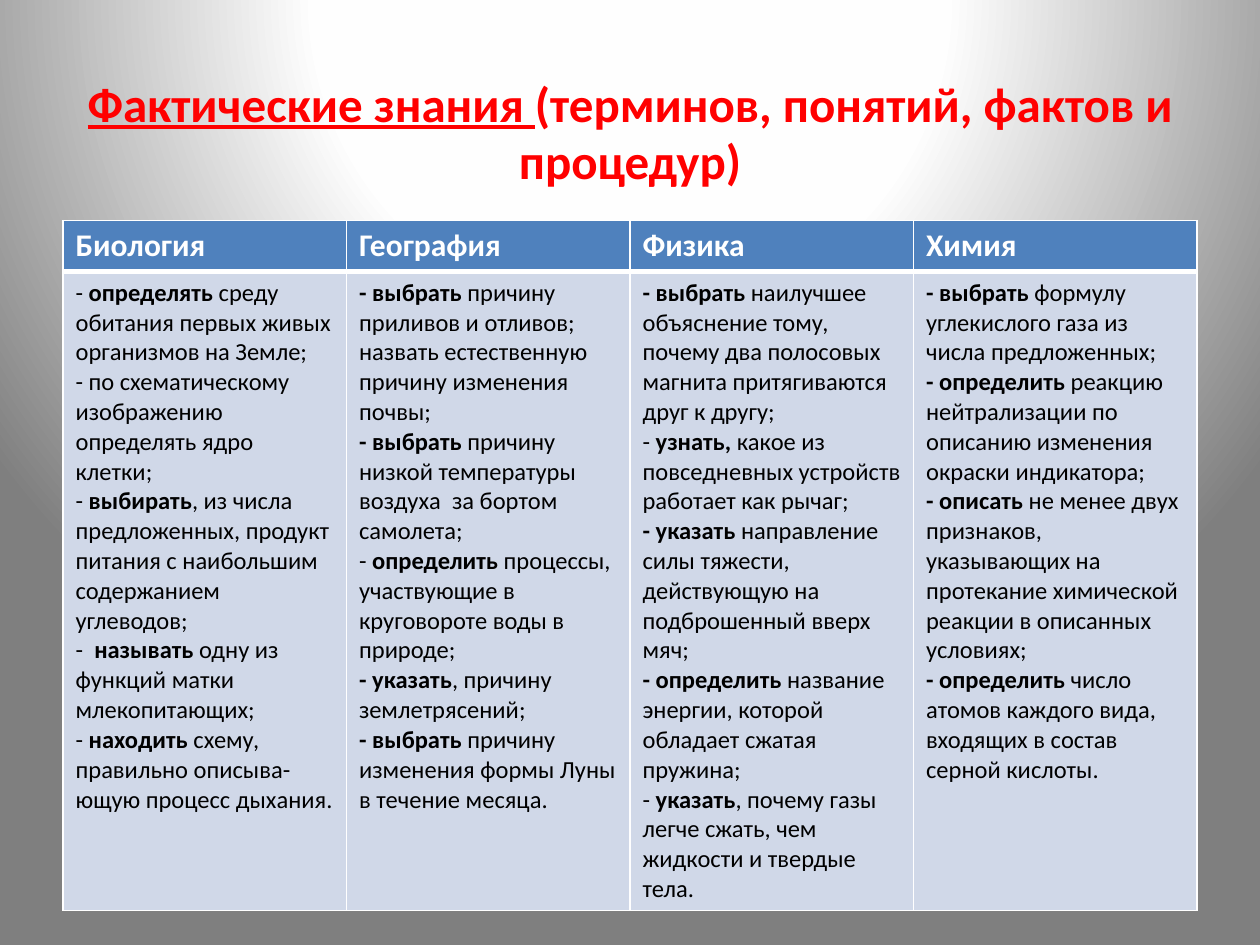
"""Build a slide with a table of factual knowledge in four school subjects."""
from lxml import etree
from pptx import Presentation
from pptx.dml.color import RGBColor
from pptx.enum.text import MSO_ANCHOR, PP_ALIGN
from pptx.oxml import parse_xml
from pptx.oxml.ns import nsdecls, qn
from pptx.util import Inches, Pt

RED = RGBColor(0xFF, 0x00, 0x00)
WHITE = RGBColor(0xFF, 0xFF, 0xFF)
BLACK = RGBColor(0x00, 0x00, 0x00)
HEADER_BLUE = RGBColor(0x4F, 0x81, 0xBD)
BODY_BLUE = RGBColor(0xD0, 0xD8, 0xE8)
GRADIENT = [(0, WHITE), (40, RGBColor(0xFE, 0xFE, 0xFE)), (100, RGBColor(0x7F, 0x7F, 0x7F))]
FONT = "Calibri"

SUBJECTS = {
    "Биология": [
        "- *определять* среду обитания первых живых организмов на Земле;",
        "- по схематическому изображению определять ядро клетки;",
        "- *выбирать*, из числа предложенных, продукт питания с наибольшим содержанием углеводов;",
        "-  *называть* одну из функций матки млекопитающих;",
        "- *находить* схему, правильно описыва-ющую процесс дыхания.",
    ],
    "География": [
        "*- выбрать* причину приливов и отливов;",
        "назвать естественную причину изменения почвы;",
        "*- выбрать* причину низкой температуры воздуха  за бортом самолета;",
        "- *определить* процессы, участвующие в круговороте воды в природе;",
        "*- указать*, причину землетрясений;",
        "*- выбрать *причину изменения формы Луны в течение месяца.",
    ],
    "Физика": [
        "*- выбрать* наилучшее объяснение тому, почему два полосовых магнита "
        "притягиваются друг к другу;",
        "- *узнать,* какое из повседневных устройств работает как рычаг;",
        "*- указать *направление силы тяжести, действующую на подброшенный вверх мяч;",
        "*- определить* название энергии, которой обладает сжатая пружина;",
        "- *указать*, почему газы легче сжать, чем жидкости и твердые тела.",
    ],
    "Химия": [
        "*- выбрать *формулу углекислого газа из числа предложенных;",
        "*- определить* реакцию нейтрализации по описанию изменения окраски индикатора;",
        "*- описать* не менее двух признаков, указывающих на протекание химической "
        "реакции в описанных условиях;",
        "*- определить* число атомов каждого вида, входящих в состав серной кислоты.",
    ],
}


def add_run(paragraph, text, size, color, bold):
    run = paragraph.add_run()
    run.text = text
    run.font.name = FONT
    run.font.size = Pt(size)
    run.font.color.rgb = color
    run.font.bold = bold
    return run


def style_cell(cell, fill_color, top_width, bottom_width):
    properties = cell._tc.get_or_add_tcPr()
    widths = {"a:lnL": 1, "a:lnR": 1, "a:lnT": top_width, "a:lnB": bottom_width}
    for tag, width in widths.items():
        line = etree.SubElement(properties, qn(tag), w=str(Pt(width)))
        fill = etree.SubElement(line, qn("a:solidFill"))
        etree.SubElement(fill, qn("a:srgbClr"), val=str(WHITE))
    cell.fill.solid()
    cell.fill.fore_color.rgb = fill_color


presentation = Presentation()
presentation.slide_width = Inches(10)
presentation.slide_height = Inches(7.5)
slide = presentation.slides.add_slide(presentation.slide_layouts[5])

stops = "".join(
    f'<a:gs pos="{position * 1000}"><a:srgbClr val="{color}"/></a:gs>'
    for position, color in GRADIENT
)
background = parse_xml(
    f'<p:bg {nsdecls("p", "a")}><p:bgPr><a:gradFill rotWithShape="1">'
    f'<a:gsLst>{stops}</a:gsLst><a:path path="circle">'
    '<a:fillToRect l="50000" t="-80000" r="50000" b="180000"/></a:path>'
    "</a:gradFill><a:effectLst/></p:bgPr></p:bg>"
)
slide.element.cSld.insert(0, background)

title = slide.shapes.title
title.left, title.top = Inches(0.5), Inches(0.3)
title.width, title.height = Inches(9), Inches(1.25)
title_frame = title.text_frame
title_frame.word_wrap = True
title_frame.vertical_anchor = MSO_ANCHOR.MIDDLE
title_frame.margin_top = Inches(0.27)
title_frame.margin_bottom = Inches(0)
heading = title_frame.paragraphs[0]
heading.alignment = PP_ALIGN.CENTER
heading.line_spacing = 0.97
add_run(heading, "Фактические знания ", 28, RED, True).font.underline = True
add_run(heading, "(терминов, понятий, фактов и процедур)", 28, RED, True)

table = slide.shapes.add_table(
    2, len(SUBJECTS), Inches(0.5), Inches(1.75), Inches(9), Inches(5.41)
).table
table.rows[0].height = Inches(0.4)
table.rows[1].height = Inches(5.01)

for column, (subject, skills) in enumerate(SUBJECTS.items()):
    header, body = table.cell(0, column), table.cell(1, column)
    style_cell(header, HEADER_BLUE, 1, 3)
    style_cell(body, BODY_BLUE, 3, 1)
    add_run(header.text_frame.paragraphs[0], subject, 18, WHITE, True)
    for index, skill in enumerate(skills):
        frame = body.text_frame
        paragraph = frame.add_paragraph() if index else frame.paragraphs[0]
        for part, text in enumerate(skill.split("*")):
            if text:
                add_run(paragraph, text, 14, BLACK, part % 2 == 1)

presentation.save("out.pptx")
